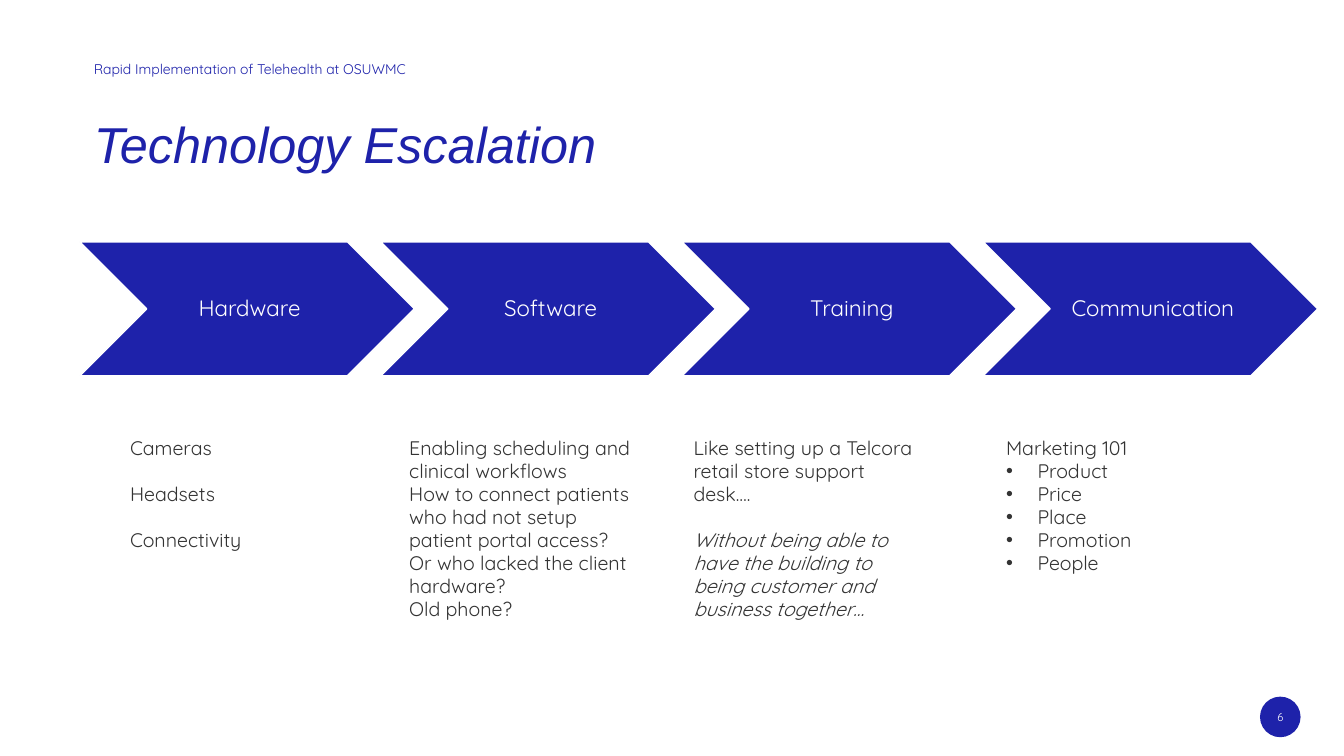
from pptx import Presentation
from pptx.dml.color import RGBColor
from pptx.enum.shapes import MSO_SHAPE
from pptx.enum.text import MSO_ANCHOR, PP_ALIGN
from pptx.oxml.ns import qn
from pptx.util import Pt
from lxml import etree

CHEVRON, OVAL = MSO_SHAPE.CHEVRON, MSO_SHAPE.OVAL
TOP, MIDDLE = MSO_ANCHOR.TOP, MSO_ANCHOR.MIDDLE
CENTER = PP_ALIGN.CENTER
BLUE, WHITE, GREY = "1E22AA", "FFFFFF", "333333"
FONT = "Quicksand"
LEAD = 16.4
INDENT = 22.5

STEPS = ["Hardware", "Software", "Training", "Communication"]
NOTES = [
    (92.9, ["Cameras", "Headsets", "Connectivity"], "gap"),
    (292.3, ["Enabling scheduling and clinical workflows",
             "How to connect patients who had not setup patient portal access?",
             "Or who lacked the client hardware?",
             "Old phone?"], "plain"),
    (495.4, ["Like setting up a Telcora retail store support desk….",
             "Without being able to have the building to being customer "
             "and business together…"], "quote"),
    (718.6, ["Marketing 101", "Product", "Price", "Place", "Promotion",
             "People"], "bullet"),
]


def color(code):
    return RGBColor.from_string(code)


def style(para, size, code, name=FONT, italic=False):
    font = para.font
    font.name, font.size, font.italic = name, Pt(size), italic
    font.color.rgb = color(code)


def setup(shape, insets, anchor):
    frame = shape.text_frame
    frame.word_wrap = True
    frame.vertical_anchor = anchor
    left, top, right, bottom = map(Pt, insets)
    frame.margin_left, frame.margin_top = left, top
    frame.margin_right, frame.margin_bottom = right, bottom
    return frame


def add_text(slide, box, insets=(0, 0, 0, 0)):
    return setup(slide.shapes.add_textbox(*map(Pt, box)), insets, TOP)


def add_solid(slide, kind, box, insets=(0, 0, 0, 0)):
    shape = slide.shapes.add_shape(kind, *map(Pt, box))
    shape.shadow.inherit = False
    shape.fill.solid()
    shape.fill.fore_color.rgb = color(BLUE)
    shape.line.fill.background()
    return shape, setup(shape, insets, MIDDLE)


def add_bullet(para):
    props = para._p.get_or_add_pPr()
    props.set("marL", str(Pt(INDENT)))
    props.set("indent", str(-Pt(INDENT)))
    etree.SubElement(props, qn("a:buFont")).set("typeface", "Arial")
    etree.SubElement(props, qn("a:buChar")).set("char", "•")


def add_head(slide, left, top, width):
    lines = [
        ("Rapid Implementation of Telehealth at OSUWMC", 0, 20, 10, FONT, False),
        ("Technology Escalation", 44.6, 80.6, 36, "Arial", True),
    ]
    for text, drop, height, size, name, italic in lines:
        para = add_text(slide, (left, top + drop, width, height)).paragraphs[0]
        para.text = text
        para.line_spacing = 0.75
        style(para, size, BLUE, name, italic)


def add_steps(slide, left, top, width, height, pitch):
    for i, step in enumerate(STEPS):
        box = (left + i * pitch, top, width, height)
        shape, frame = add_solid(slide, CHEVRON, box, (5, 1.5, 1.5, 1.5))
        shape.line.color.rgb = color(WHITE)
        shape.line.width = Pt(1)
        para = frame.paragraphs[0]
        para.text = step
        para.alignment = CENTER
        para.line_spacing = 0.9
        style(para, 16, WHITE)


def add_note(slide, left, top, width, height, lines, mode):
    frame = add_text(slide, (left, top, width, height), (0, 3.6, 0, 3.6))
    for i, line in enumerate(lines):
        para = frame.add_paragraph() if i else frame.paragraphs[0]
        para.text = line
        para.line_spacing = Pt(LEAD)
        if i and mode in ("gap", "quote"):
            para.space_before = Pt(LEAD)
        if i and mode == "bullet":
            add_bullet(para)
        style(para, 14, GREY, italic=bool(i) and mode == "quote")


def add_badge(slide, left, top, size):
    _, frame = add_solid(slide, OVAL, (left, top, size, size))
    frame.word_wrap = False
    para = frame.paragraphs[0]
    para.text = "6"
    para.alignment = CENTER
    style(para, 8, WHITE)


def main():
    deck = Presentation()
    deck.slide_width, deck.slide_height = Pt(960), Pt(540)
    slide = deck.slides.add_slide(deck.slide_layouts[6])
    add_badge(slide, 900, 497.6, 29)
    add_head(slide, 67, 46.1, 774)
    for left, lines, mode in NOTES:
        add_note(slide, left, 308.2, 162.7, 140, lines, mode)
    add_steps(slide, 57, 172.8, 239, 95.6, 215.1)
    deck.save("out.pptx")


if __name__ == "__main__":
    main()
